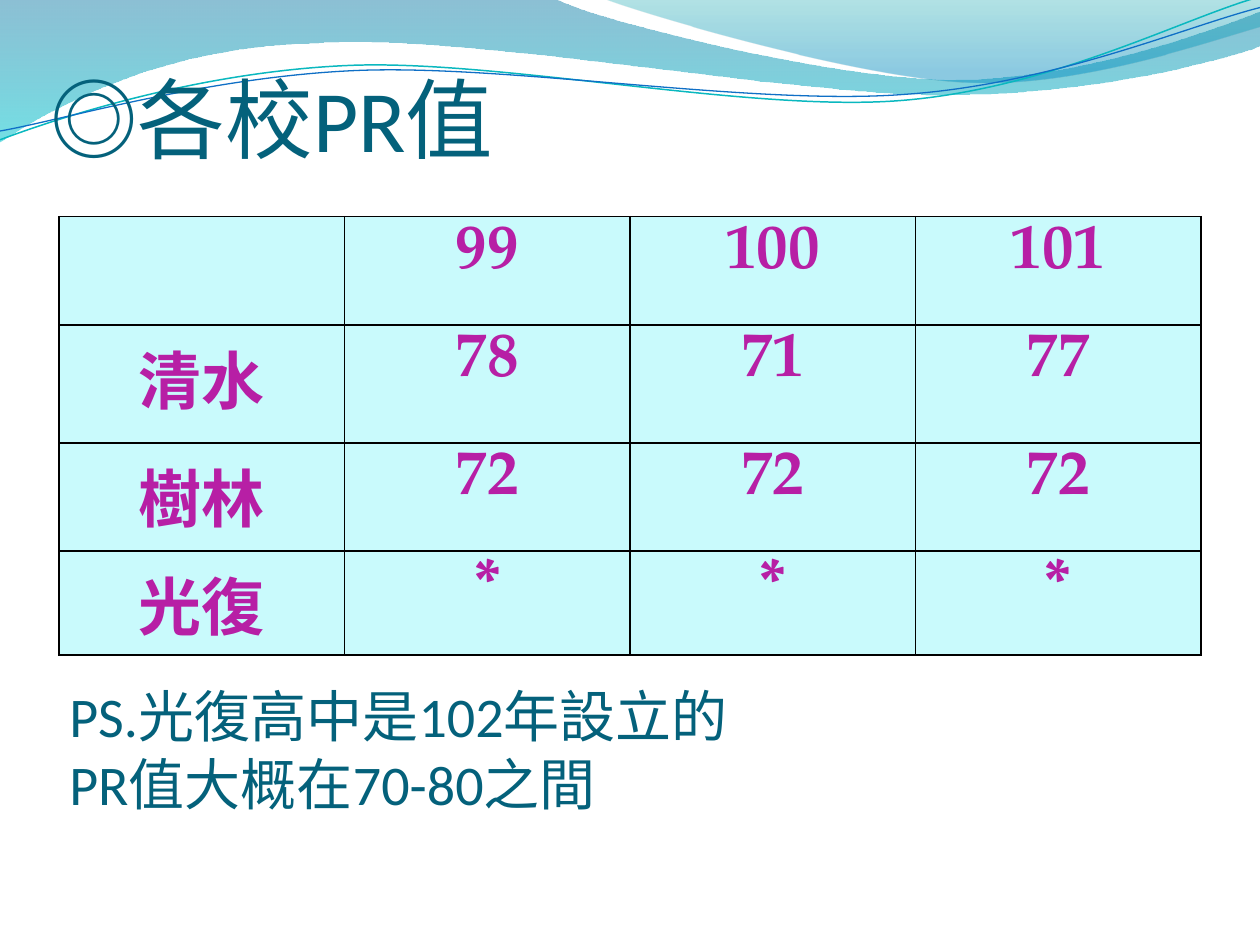
import pptx
import pptx.util
import pptx.dml.color
import pptx.enum.text
import pptx.oxml
import pptx.oxml.ns
import lxml.etree

Inches = pptx.util.Inches
Pt = pptx.util.Pt
qn = pptx.oxml.ns.qn

TEAL = "04617B"
PURPLE = "B71FA5"
PALE_CYAN = "C9FAFC"

LEFT_WAVE = [
    [(0, 0)], [(4.4, -0.01)],
    [(4.76, 0.17), (6.64, 0.63), (7.58, 0.63)],
    [(8.53, 0.63), (9.58, 0.26), (10, 0.09)],
    [(10.01, 0.36)],
    [(9.83, 0.44), (8.7, 0.76), (7.46, 0.75)],
    [(6.22, 0.75), (3.82, 0.28), (2.57, 0.34)],
    [(1.29, 0.36), (0.46, 0.83), (-0.01, 1.13)],
    [(0, 0)],
]
RIGHT_WAVE = [
    [(4.79, -0.01)],
    [(5.09, 0.11), (6.82, 0.62), (7.69, 0.65)],
    [(8.56, 0.69), (9.61, 0.32), (10, 0.21)],
    [(10, 0)], [(4.79, -0.01)],
]
CYAN_STRAND = [
    [(0, 1.11)],
    [(0.48, 0.93), (1.58, 0.57), (2.77, 0.52)],
    [(3.95, 0.47), (5.93, 0.89), (7.13, 0.8)],
    [(8.33, 0.71), (9.38, 0.15), (9.98, -0.02)],
]
BLUE_STRAND = [
    [(0, 1.04)],
    [(0.47, 0.96), (1.64, 0.61), (2.83, 0.56)],
    [(4.03, 0.51), (5.97, 0.84), (7.17, 0.75)],
    [(8.36, 0.67), (9.41, 0.21), (10, 0.06)],
]
SCORES = [
    ["", "99", "100", "101"],
    ["清水", "78", "71", "77"],
    ["樹林", "72", "72", "72"],
    ["光復", "*", "*", "*"],
]
ROW_HEIGHTS = [0.86, 0.94, 0.86, 0.83]


def color(hex_value):
    return pptx.dml.color.RGBColor.from_string(hex_value)


def add_run(paragraph, text, size, font, hex_value, bold=False):
    run = paragraph.add_run()
    run.text = text
    run.font.size = Pt(size)
    run.font.name = font
    run.font.bold = bold
    run.font.color.rgb = color(hex_value)


def add_curve(slide, left, top, segments, closed):
    points = [(left + Inches(x), top + Inches(y)) for segment in segments for x, y in segment]
    builder = slide.shapes.build_freeform(*points[0], scale=1.0)
    builder.add_line_segments(points[1:], close=closed)
    curve = builder.convert_to_shape()
    curve.shadow.inherit = False
    straight = iter(list(curve.element.iter(qn("a:lnTo"))))
    for segment in segments[1:]:
        steps = [next(straight) for _ in segment]
        if len(steps) == 3:
            bezier = lxml.etree.Element(qn("a:cubicBezTo"))
            steps[0].addprevious(bezier)
            for step in steps:
                bezier.append(step[0])
                step.getparent().remove(step)
    return curve


def add_wave(slide, left, top, segments, stops):
    wave = add_curve(slide, left, top, segments, True)
    wave.line.fill.background()
    wave.fill.gradient()
    wave.fill.gradient_angle = 270
    for stop, (position, hex_value, opacity) in zip(wave.fill.gradient_stops, stops):
        stop.position = position
        stop.color.rgb = color(hex_value)
    for node, (_, _, opacity) in zip(wave.element.spPr.iter(qn("a:srgbClr")), stops):
        lxml.etree.SubElement(node, qn("a:alpha"), val=str(opacity * 1000))


def add_strand(slide, left, top, segments, hex_value, width):
    strand = add_curve(slide, left, top, segments, False)
    strand.fill.background()
    strand.line.color.rgb = color(hex_value)
    strand.line.width = Pt(width)


def add_wave_banner(slide, left, top):
    add_wave(slide, left, top, LEFT_WAVE, [(0, "0074A1", 45), (1, "00C6CF", 55)])
    add_wave(slide, left, top, RIGHT_WAVE, [(0, "00A1A9", 30), (0.8, "008BBF", 45)])
    add_strand(slide, left, top, CYAN_STRAND, "0AB8BF", 0.85)
    add_strand(slide, left, top, BLUE_STRAND, "0F6FC6", 0.75)


def fill_text(shape, lines, size):
    frame = shape.text_frame
    frame.word_wrap = True
    frame.auto_size = pptx.enum.text.MSO_AUTO_SIZE.NONE
    frame.vertical_anchor = pptx.enum.text.MSO_ANCHOR.BOTTOM
    frame.margin_left = frame.margin_right = frame.margin_bottom = 0
    frame.margin_top = Inches(0.05)
    paragraph = frame.paragraphs[0]
    paragraph.alignment = pptx.enum.text.PP_ALIGN.LEFT
    for index, line in enumerate(lines):
        if index:
            paragraph.add_line_break()
        add_run(paragraph, line, size, "Calibri", TEAL)


def place_title(slide, left, top, width, height):
    title = slide.shapes.title
    title.left, title.top, title.width, title.height = left, top, width, height
    fill_text(title, ["PS.光復高中是102年設立的 ", "PR值大概在70-80之間"], 32)
    slide.shapes.element.append(title.element)


def add_heading(slide, left, top, width, height):
    heading = slide.shapes.add_textbox(left, top, width, height)
    fill_text(heading, ["◎各校PR值"], 50)


def add_borders(cell):
    properties = cell._tc.get_or_add_tcPr()
    for side in ("a:lnL", "a:lnR", "a:lnT", "a:lnB"):
        border = lxml.etree.SubElement(properties, qn(side), w=str(Pt(1)))
        solid = lxml.etree.SubElement(border, qn("a:solidFill"))
        lxml.etree.SubElement(solid, qn("a:srgbClr"), val="000000")


def add_score_table(slide, left, top, width, height):
    table = slide.shapes.add_table(len(SCORES), len(SCORES[0]), left, top, width, height).table
    table.first_row = table.horz_banding = False
    for row, share in zip(table.rows, ROW_HEIGHTS):
        row.height = int(height * share / sum(ROW_HEIGHTS))
    for row, values in zip(table.rows, SCORES):
        for cell, value in zip(row.cells, values):
            add_borders(cell)
            cell.fill.solid()
            cell.fill.fore_color.rgb = color(PALE_CYAN)
            paragraph = cell.text_frame.paragraphs[0]
            paragraph.alignment = pptx.enum.text.PP_ALIGN.CENTER
            if value:
                add_run(paragraph, value, 36, "TeX Gyre Pagella", PURPLE, True)


def main():
    presentation = pptx.Presentation()
    presentation.slide_width = Inches(10)
    presentation.slide_height = Inches(7.5)
    slide = presentation.slides.add_slide(presentation.slide_layouts[5])
    add_wave_banner(slide, 0, 0)
    place_title(slide, Inches(0.55), Inches(5.31), Inches(6.33), Inches(1.17))
    add_score_table(slide, Inches(0.47), Inches(1.72), Inches(9.06), Inches(3.48))
    add_heading(slide, Inches(0.4), Inches(0.56), Inches(9), Inches(0.79))
    presentation.save("out.pptx")


if __name__ == "__main__":
    main()
